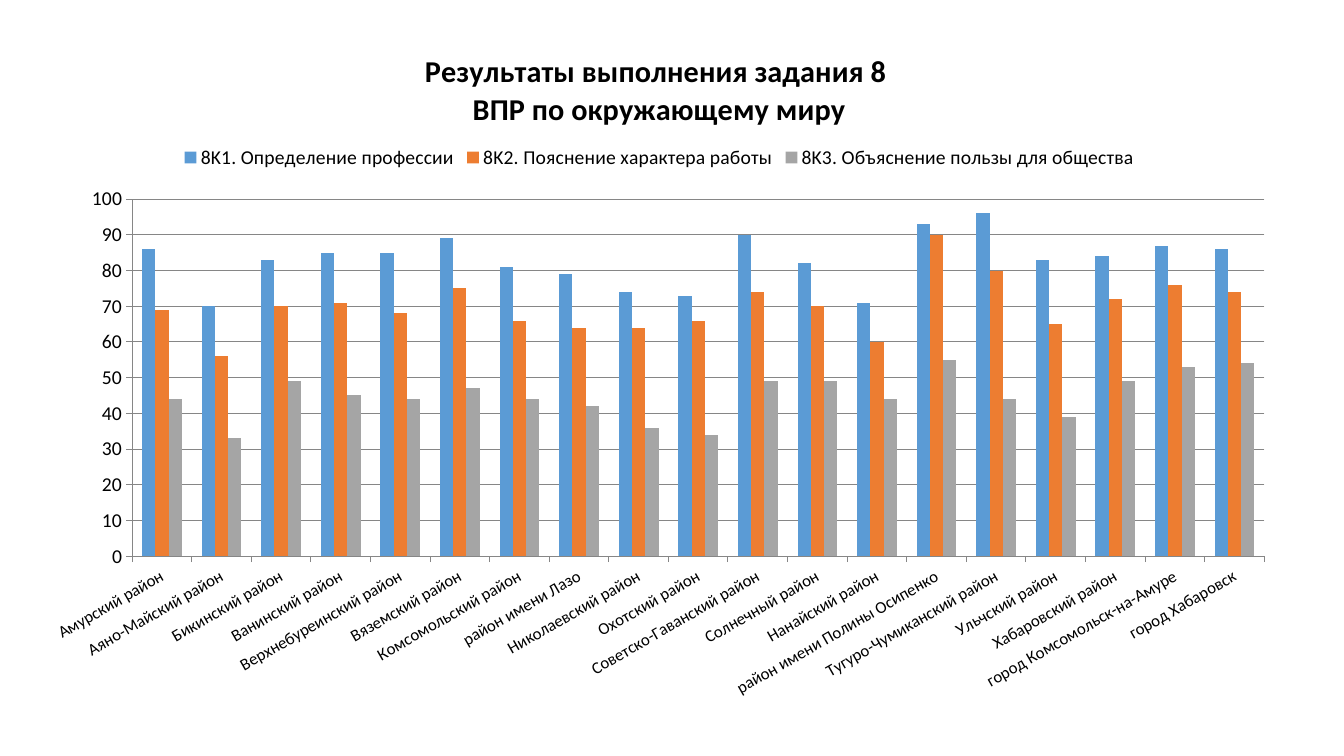
from pptx import Presentation
from pptx import util as u
from pptx.chart.data import CategoryChartData
from pptx.dml.color import RGBColor
from pptx.enum import chart as ch
from pptx.oxml.ns import qn

HUES = {"text": "000000", "line": "868686", "back": "FFFFFF",
        "job": "5B9BD5", "work": "ED7D31", "use": "A5A5A5"}
FACE = "Calibri"
TITLE = ["Результаты выполнения задания 8 ", "ВПР по окружающему миру"]
AREAS = [
    "Амурский район", "Аяно-Майский район", "Бикинский район",
    "Ванинский район", "Верхнебуреинский район", "Вяземский район",
    "Комсомольский район", "район имени Лазо", "Николаевский район",
    "Охотский район", "Советско-Гаванский район", "Солнечный район",
    "Нанайский район", "район имени Полины Осипенко",
    "Тугуро-Чумиканский район", "Ульчский район", "Хабаровский район",
    "город Комсомольск-на-Амуре", "город Хабаровск",
]
SCORES = [
    ("8K1. Определение профессии", "job",
     [86, 70, 83, 85, 85, 89, 81, 79, 74, 73, 90, 82, 71, 93, 96, 83, 84, 87, 86]),
    ("8K2. Пояснение характера работы", "work",
     [69, 56, 70, 71, 68, 75, 66, 64, 64, 66, 74, 70, 60, 90, 80, 65, 72, 76, 74]),
    ("8K3. Объяснение пользы для общества", "use",
     [44, 33, 49, 45, 44, 47, 44, 42, 36, 34, 49, 49, 44, 55, 44, 39, 49, 53, 54]),
]


def tint(name):
    return RGBColor.from_string(HUES[name])


def style(font, size, bold=False):
    font.name = FACE
    font.size = u.Pt(size)
    font.bold = bold
    font.color.rgb = tint("text")


def write(frame, lines, size, bold=False):
    """Put each line in its own paragraph with one format."""
    for i, line in enumerate(lines):
        para = frame.add_paragraph() if i else frame.paragraphs[0]
        run = para.add_run()
        run.text = line
        style(run.font, size, bold)


def stroke(line):
    line.color.rgb = tint("line")
    line.width = u.Pt(0.75)


def axes(chart):
    cats, vals = chart.category_axis, chart.value_axis
    for axis, size in ((cats, 12), (vals, 14)):
        style(axis.tick_labels.font, size)
        stroke(axis.format.line)
        axis.major_tick_mark = ch.XL_TICK_MARK.OUTSIDE
        axis.minor_tick_mark = ch.XL_TICK_MARK.NONE
    # Slanted district names
    body = cats._element.find(qn("c:txPr")).find(qn("a:bodyPr"))
    body.set("rot", str(-30 * 60000))
    body.set("vert", "horz")
    vals.minimum_scale, vals.maximum_scale, vals.major_unit = 0, 100, 10
    vals.has_major_gridlines = True
    stroke(vals.major_gridlines.format.line)


def graph(slide, left, top, width, height):
    data = CategoryChartData()
    data.categories = AREAS
    for name, _, marks in SCORES:
        data.add_series(name, marks)
    chart = slide.shapes.add_chart(
        ch.XL_CHART_TYPE.COLUMN_CLUSTERED, u.Inches(left), u.Inches(top),
        u.Inches(width), u.Inches(height), data).chart
    style(chart.font, 18)

    # Title and legend
    chart.has_title = True
    write(chart.chart_title.text_frame, TITLE, 21.6, bold=True)
    chart.chart_title.include_in_layout = False
    chart.has_legend = True
    chart.legend.position = ch.XL_LEGEND_POSITION.TOP
    chart.legend.include_in_layout = False
    style(chart.legend.font, 14)

    # Columns
    plot = chart.plots[0]
    plot.gap_width, plot.overlap = 150, 0
    plot.vary_by_categories = False
    for bars, (_, hue, _) in zip(plot.series, SCORES):
        bars.format.fill.solid()
        bars.format.fill.fore_color.rgb = tint(hue)
    axes(chart)


def main():
    deck = Presentation()
    deck.slide_width, deck.slide_height = u.Inches(13.33), u.Inches(7.5)
    slide = deck.slides.add_slide(deck.slide_layouts[6])
    slide.background.fill.solid()
    slide.background.fill.fore_color.rgb = tint("back")
    graph(slide, 0.29, 0.29, 12.5, 6.77)
    deck.save("out.pptx")


if __name__ == "__main__":
    main()
